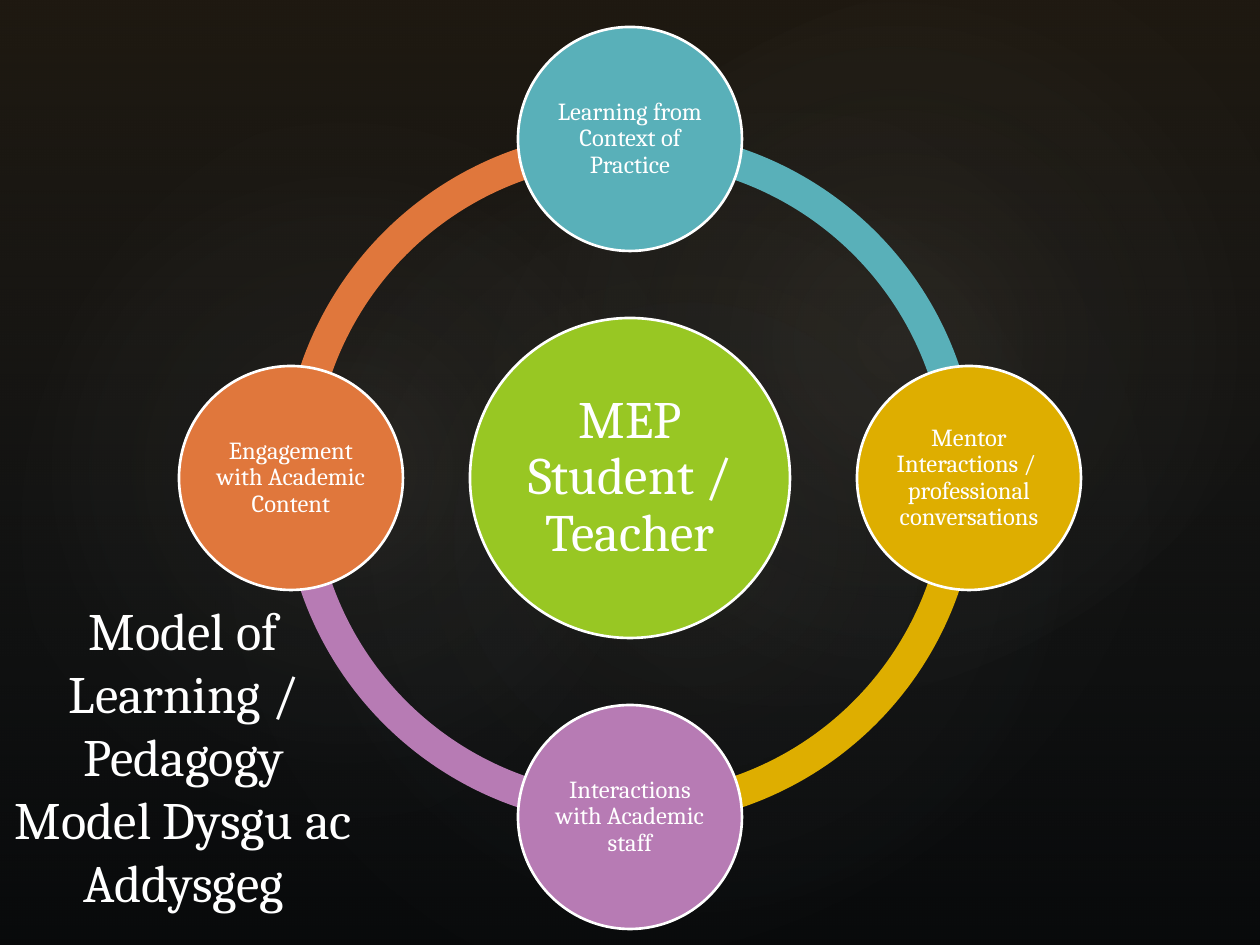
"""Build a slide with four linked circles of learning around a central student teacher."""
from lxml import etree
from pptx import Presentation
from pptx.dml.color import RGBColor
from pptx.enum.shapes import MSO_SHAPE
from pptx.enum.text import MSO_ANCHOR, MSO_AUTO_SIZE, PP_ALIGN
from pptx.oxml import parse_xml
from pptx.oxml.ns import nsdecls
from pptx.util import Pt

PX = 914400 // 126
BLACK = RGBColor(0x00, 0x00, 0x00)
WHITE = RGBColor(0xFF, 0xFF, 0xFF)
GREEN = RGBColor(0x98, 0xC7, 0x23)
TEAL = RGBColor(0x59, 0xB0, 0xB9)
GOLD = RGBColor(0xDE, 0xAE, 0x00)
PURPLE = RGBColor(0xB7, 0x7B, 0xB4)
ORANGE = RGBColor(0xE0, 0x77, 0x3C)
BROWN = RGBColor(0x56, 0x47, 0x30)
SLATE = RGBColor(0x5B, 0x69, 0x73)
SAND = RGBColor(0xCB, 0xBB, 0xA1)

CENTER_X, CENTER_Y = 630, 478
ORBIT, RING, HUB, NODE = 339, 696, 320, 224


def add_plain_shape(page, kind, left, top, width, height):
    shape = page.shapes.add_shape(kind, *(round(n * PX) for n in (left, top, width, height)))
    shape.shadow.inherit = False
    shape.line.fill.background()
    return shape


def set_gradient(shape, stops, direction):
    listed = "".join(
        f'<a:gs pos="{position * 1000}"><a:srgbClr val="{color}">'
        f'<a:alpha val="{opacity * 1000}"/></a:srgbClr></a:gs>'
        for position, color, opacity in stops
    )
    gradient = parse_xml(
        f'<a:gradFill {nsdecls("a")} rotWithShape="1"><a:gsLst>{listed}</a:gsLst>{direction}</a:gradFill>'
    )
    shape.fill.background()
    properties = shape.element.spPr
    properties.replace(properties.find("{*}noFill"), gradient)


deck = Presentation()
deck.slide_width, deck.slide_height = 1260 * PX, 945 * PX
page = deck.slides.add_slide(deck.slide_layouts[5])
page.background.fill.solid()
page.background.fill.fore_color.rgb = BLACK

shade = add_plain_shape(page, MSO_SHAPE.RECTANGLE, 0, 0, 1260, 945)
set_gradient(shade, [(0, BROWN, 36), (100, SLATE, 10)], '<a:lin ang="5400000" scaled="0"/>')

radial = '<a:path path="circle"><a:fillToRect l="50000" t="50000" r="50000" b="50000"/></a:path>'
for left, top, width, height, rotation, opacity in [
    (189, 144, 998, 786, 328.7, 7),
    (-38, 161, 764, 617, 294.3, 8),
    (451, 16, 893, 655, 328.7, 8),
]:
    glow = add_plain_shape(page, MSO_SHAPE.OVAL, left, top, width, height)
    glow.rotation = rotation
    set_gradient(glow, [(0, SAND, opacity), (58, SLATE, 0)], radial)

for start, end, color in [(108, 162, ORANGE), (54, 108, PURPLE), (0, 54, GOLD), (162, 0, TEAL)]:
    arc = add_plain_shape(
        page, MSO_SHAPE.BLOCK_ARC, CENTER_X - RING / 2, CENTER_Y - RING / 2, RING, RING
    )
    for index, value in enumerate((start, end, 0.046)):
        arc.adjustments[index] = value
    arc.fill.solid()
    arc.fill.fore_color.rgb = color

for text, across, down, size, color, points, inset in [
    ("MEP Student / Teacher", 0, 0, HUB, GREEN, 30, 5),
    ("Learning from Context of Practice", 0, -1, NODE, TEAL, 14, 3),
    ("Mentor Interactions /  professional conversations", 1, 0, NODE, GOLD, 14, 3),
    ("Interactions with Academic staff", 0, 1, NODE, PURPLE, 14, 3),
    ("Engagement with Academic Content", -1, 0, NODE, ORANGE, 14, 3),
]:
    left = CENTER_X + across * ORBIT - size / 2
    top = CENTER_Y + down * ORBIT - size / 2
    circle = add_plain_shape(page, MSO_SHAPE.OVAL, left, top, size, size)
    circle.fill.solid()
    circle.fill.fore_color.rgb = color
    circle.line.color.rgb = WHITE
    circle.line.width = Pt(1.5)
    frame = circle.text_frame
    frame.word_wrap = True
    frame.vertical_anchor = MSO_ANCHOR.MIDDLE
    for side in ("left", "top", "right", "bottom"):
        setattr(frame, f"margin_{side}", inset * PX)
    para = frame.paragraphs[0]
    para.alignment = PP_ALIGN.CENTER
    para.line_spacing = 0.9
    span = para.add_run()
    span.text = text
    for name, value in {"name": "Cambria", "size": Pt(points)}.items():
        setattr(span.font, name, value)
    span.font.color.rgb = WHITE

title = page.shapes.title
for name, value in {"left": 0, "top": 591, "width": 367, "height": 328}.items():
    setattr(title, name, value * PX)
frame = title.text_frame
frame.text = "Model of Learning / Pedagogy\vModel Dysgu ac Addysgeg"
frame.word_wrap = True
frame.auto_size = MSO_AUTO_SIZE.NONE
frame.vertical_anchor = MSO_ANCHOR.BOTTOM
para = frame.paragraphs[0]
para.alignment = PP_ALIGN.CENTER
for span in para.runs:
    for name, value in {"name": "Cambria", "size": Pt(30)}.items():
        setattr(span.font, name, value)
    span.font.color.rgb = WHITE
for line_break in para._p.findall("{*}br"):
    etree.SubElement(line_break, line_break.tag.replace("}br", "}rPr"), sz="3000")
title.element.getparent().append(title.element)

deck.save("out.pptx")
